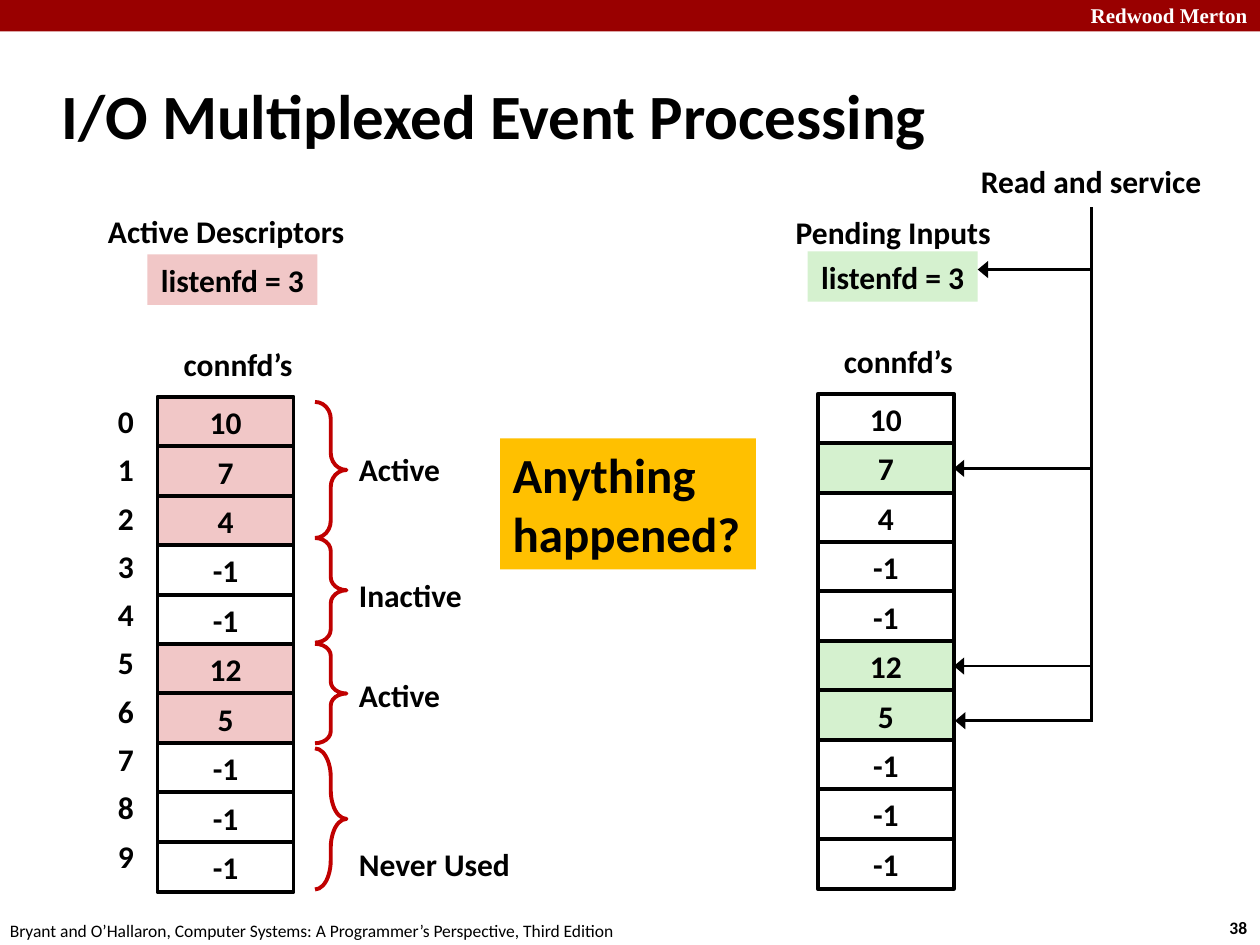
from lxml import etree
from pptx import Presentation
from pptx import util as u
from pptx.dml.color import RGBColor
from pptx.enum import shapes, text
from pptx.oxml import ns

BLACK = RGBColor(0x00, 0x00, 0x00)
WHITE = RGBColor(0xFF, 0xFF, 0xFF)
BANNER_RED = RGBColor(0x99, 0x00, 0x00)
BRACE_RED = RGBColor(0xC0, 0x00, 0x00)
PINK = RGBColor(0xF1, 0xC7, 0xC7)
GREEN = RGBColor(0xD5, 0xF1, 0xCF)
AMBER = RGBColor(0xFF, 0xC0, 0x00)

WIDTH, HEIGHT = u.Inches(10), u.Inches(7.5)
CELL_W, CELL_H, CELL_PITCH = 10.8, 5.33, 5.23
INDEX_PITCH = 5.11
PENDING_LEFT, PENDING_TOP = 64.9, 41.67
TRUNK_X = 86.65
LEFT, CENTER, RIGHT = text.PP_ALIGN.LEFT, text.PP_ALIGN.CENTER, text.PP_ALIGN.RIGHT

DESCRIPTORS = ["10", "7", "4", "-1", "-1", "12", "5", "-1", "-1", "-1"]
ACTIVE_ROWS = {0, 1, 2, 5, 6}
PENDING_ROWS = {1, 5, 6}
RANGES = [
    ("Active", 42.53, 14.4, 0.54, 46.93),
    ("Inactive", 56.93, 11.07, 0.42, 60.27),
    ("Active", 68.13, 10.53, 0.38, 70.93),
    ("Never Used", 79.2, 14.93, 0.92, 88.8),
]


def across(percent):
    return round(WIDTH * percent / 100)


def down(percent):
    return round(HEIGHT * percent / 100)


def place(left, top, width, height):
    return across(left), down(top), across(width), down(height)


def write(shape, lines, size=18, align=LEFT, color=BLACK, bold=True,
          font="Calibri", middle=False, wrap=False):
    frame = shape.text_frame
    frame.word_wrap = wrap
    frame.vertical_anchor = text.MSO_ANCHOR.MIDDLE if middle else text.MSO_ANCHOR.TOP
    for number, line in enumerate(lines.split("\n")):
        paragraph = frame.add_paragraph() if number else frame.paragraphs[0]
        paragraph.alignment = align
        run = paragraph.add_run()
        run.text = line
        run.font.name = font
        run.font.size = u.Pt(size)
        run.font.bold = bold
        run.font.color.rgb = color


def add_label(slide, area, lines, **style):
    write(slide.shapes.add_textbox(*place(*area)), lines, **style)


def add_box(slide, area, fill, outlined=False):
    box = slide.shapes.add_shape(shapes.MSO_SHAPE.RECTANGLE, *place(*area))
    box.shadow.inherit = False
    box.fill.solid()
    box.fill.fore_color.rgb = fill
    if outlined:
        box.line.color.rgb = BLACK
        box.line.width = u.Pt(2.25)
    else:
        box.line.fill.background()
    return box


def add_brace(slide, top, height, curl):
    brace = slide.shapes.add_shape(shapes.MSO_SHAPE.RIGHT_BRACE,
                                   *place(25, top, 2.5, height))
    brace.shadow.inherit = False
    brace.adjustments[0] = curl
    brace.fill.background()
    brace.line.color.rgb = BRACE_RED
    brace.line.width = u.Pt(2.25)


def add_line(slide, start, end, arrow=False):
    line = slide.shapes.add_connector(
        shapes.MSO_CONNECTOR.STRAIGHT,
        across(start[0]), down(start[1]), across(end[0]), down(end[1]))
    line.line.color.rgb = BLACK
    line.line.width = u.Pt(1.5)
    if arrow:
        etree.SubElement(line.line._get_or_add_ln(), ns.qn("a:tailEnd"),
                         type="triangle", w="lg", len="med")
    etree.SubElement(line._element.spPr, ns.qn("a:effectLst"))
    return line


def add_descriptor_panel(slide, left, top, marked_rows, color):
    listener = add_box(slide, (left - 0.8, top - 15.07, 13.5, CELL_H), color)
    write(listener, "listenfd = 3", align=CENTER)
    add_label(slide, (left + 0.9, top - 6.13, 11, CELL_H), "connfd’s", align=CENTER)
    cells = []
    for row, value in enumerate(DESCRIPTORS):
        fill = color if row in marked_rows else WHITE
        area = (left, top + row * CELL_PITCH, CELL_W, CELL_H)
        cell = add_box(slide, area, fill, outlined=True)
        write(cell, value, align=CENTER, middle=True, wrap=True)
        cells.append(cell)
    return cells


def add_service_arrows(slide, cells):
    add_label(slide, (75.7, 16.53, 21.8, CELL_H), "Read and service",
              align=CENTER, wrap=True)
    add_line(slide, (TRUNK_X, 76.4), (TRUNK_X, 21.87))
    for tip_x, y in ((77.6, 28.53), (75.8, 76.27)):
        add_line(slide, (TRUNK_X, y), (tip_x, y), arrow=True)
    for row in (1, 5):
        y = PENDING_TOP + row * CELL_PITCH + CELL_H / 2
        arrow = add_line(slide, (TRUNK_X, y), (PENDING_LEFT + CELL_W, y), arrow=True)
        arrow.end_connect(cells[row], 3)


def add_frame(slide):
    add_box(slide, (0, 0, 100, 3.33), BANNER_RED)
    add_label(slide, (70, -0.4, 30, 4), "Redwood Merton", size=12, align=RIGHT,
              color=WHITE, font="Times New Roman", wrap=True)
    add_label(slide, (96.6, 96.4, 3.7, 3.6), "38", size=10)
    add_label(slide, (-0.2, 96.67, 50.8, 3.6),
              "Bryant and O’Hallaron, Computer Systems: "
              "A Programmer’s Perspective, Third Edition", size=10, bold=False)
    add_label(slide, (3.9, 6.53, 83, 11.07), "I/O Multiplexed Event Processing",
              size=36, middle=True, wrap=True)


def main():
    deck = Presentation()
    deck.slide_width, deck.slide_height = WIDTH, HEIGHT
    slide = deck.slides.add_slide(deck.slide_layouts[6])
    add_frame(slide)

    add_label(slide, (7.5, 21.73, 20.9, CELL_H), "Active Descriptors", align=CENTER)
    add_descriptor_panel(slide, 12.5, 42, ACTIVE_ROWS, PINK)
    for row in range(len(DESCRIPTORS)):
        add_label(slide, (0.8, 41.87 + row * INDEX_PITCH, CELL_W, CELL_H), str(row),
                  align=RIGHT, middle=True, wrap=True)
    for state, top, height, curl, label_top in RANGES:
        add_brace(slide, top, height, curl)
        add_label(slide, (27.5, label_top, 14.2, CELL_H), state)

    add_label(slide, (60, 21.87, 21.8, CELL_H), "Pending Inputs",
              align=CENTER, wrap=True)
    pending_cells = add_descriptor_panel(slide, PENDING_LEFT, PENDING_TOP,
                                         PENDING_ROWS, GREEN)
    add_service_arrows(slide, pending_cells)

    question = add_box(slide, (39.7, 46.4, 20.3, 13.87), AMBER)
    write(question, "Anything\nhappened?", size=28)

    deck.save("out.pptx")


if __name__ == "__main__":
    main()
